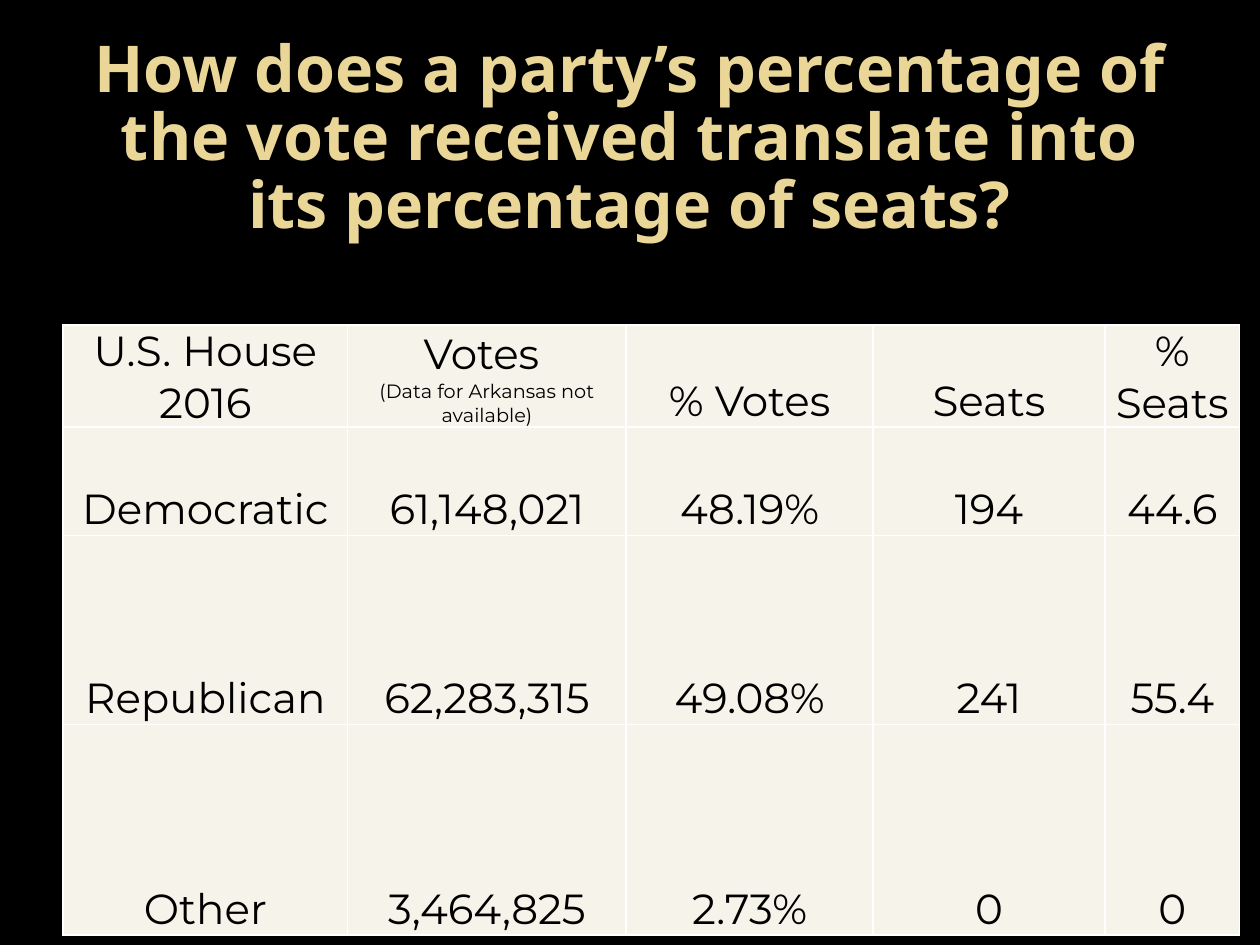
from pptx import Presentation
from pptx.dml.color import RGBColor
from pptx.enum.text import MSO_ANCHOR as Anchor, PP_ALIGN as Align
from pptx.oxml import parse_xml
from pptx.oxml.ns import nsdecls
from pptx.util import Inches, Pt

COLORS = {"background": "000000", "title": "EAD696", "cell": "F6F3EA",
          "text": "000000", "border": "FFFFFF"}
TITLE = ("How does a party’s percentage of the vote received "
         "translate into its percentage of seats?")
VOTES_NOTE = "(Data for Arkansas not available)"
RESULTS = [
    ["U.S. House 2016", "Votes ", "% Votes", "Seats", "% Seats"],
    ["Democratic", "61,148,021", "48.19%", "194", "44.6"],
    ["Republican", "62,283,315", "49.08%", "241", "55.4"],
    ["Other", "3,464,825", "2.73%", "0", "0"],
]
COLUMN_WIDTHS = [2.26, 2.21, 1.96, 1.84, 1.07]
ROW_HEIGHTS = [0.78, 0.86, 1.5, 1.67]


def color(name):
    return RGBColor.from_string(COLORS[name])


def write(para, text, size=24, font="Montserrat", ink="text", bold=False):
    para.alignment = Align.CENTER
    span = para.add_run()
    span.text = text
    span.font.size = Pt(size)
    span.font.name = font
    span.font.bold = bold
    span.font.color.rgb = color(ink)


def add_title(page):
    box = page.shapes.add_textbox(Inches(0.5), Inches(0.3), Inches(9), Inches(2.2))
    frame = box.text_frame
    frame.word_wrap = True
    frame.vertical_anchor = Anchor.MIDDLE
    frame.margin_bottom = Inches(0.63)  # lifts the heading away from the table
    para = frame.paragraphs[0]
    para.line_spacing = 0.88
    write(para, TITLE, size=36.9, font="Noto Sans", ink="title", bold=True)


def add_borders(cell):
    properties = cell._tc.get_or_add_tcPr()
    for index, side in enumerate(("lnL", "lnR", "lnT", "lnB")):
        properties.insert(index, parse_xml(
            f'<a:{side} {nsdecls("a")} w="{Pt(1)}"><a:solidFill>'
            f'<a:srgbClr val="{COLORS["border"]}"/></a:solidFill></a:{side}>'))


def format_cell(cell):
    cell.fill.solid()
    cell.fill.fore_color.rgb = color("cell")
    cell.vertical_anchor = Anchor.BOTTOM
    cell.margin_left = cell.margin_right = cell.margin_top = Inches(0.01)
    cell.margin_bottom = 0
    add_borders(cell)


def add_results(page):
    table = page.shapes.add_table(
        len(RESULTS), len(COLUMN_WIDTHS), Inches(0.5), Inches(2.58),
        Inches(sum(COLUMN_WIDTHS)), Inches(sum(ROW_HEIGHTS))).table
    for column, width in zip(table.columns, COLUMN_WIDTHS):
        column.width = Inches(width)
    for row, height, texts in zip(table.rows, ROW_HEIGHTS, RESULTS):
        row.height = Inches(height)
        for cell, text in zip(row.cells, texts):
            format_cell(cell)
            write(cell.text_frame.paragraphs[0], text)
    # Small note below the votes heading
    write(table.cell(0, 1).text_frame.add_paragraph(), VOTES_NOTE, size=11)


def main():
    deck = Presentation()
    deck.slide_width, deck.slide_height = Inches(10), Inches(7.5)
    page = deck.slides.add_slide(deck.slide_layouts[6])
    page.background.fill.solid()
    page.background.fill.fore_color.rgb = color("background")
    add_title(page)
    add_results(page)
    deck.save("out.pptx")


if __name__ == "__main__":
    main()
